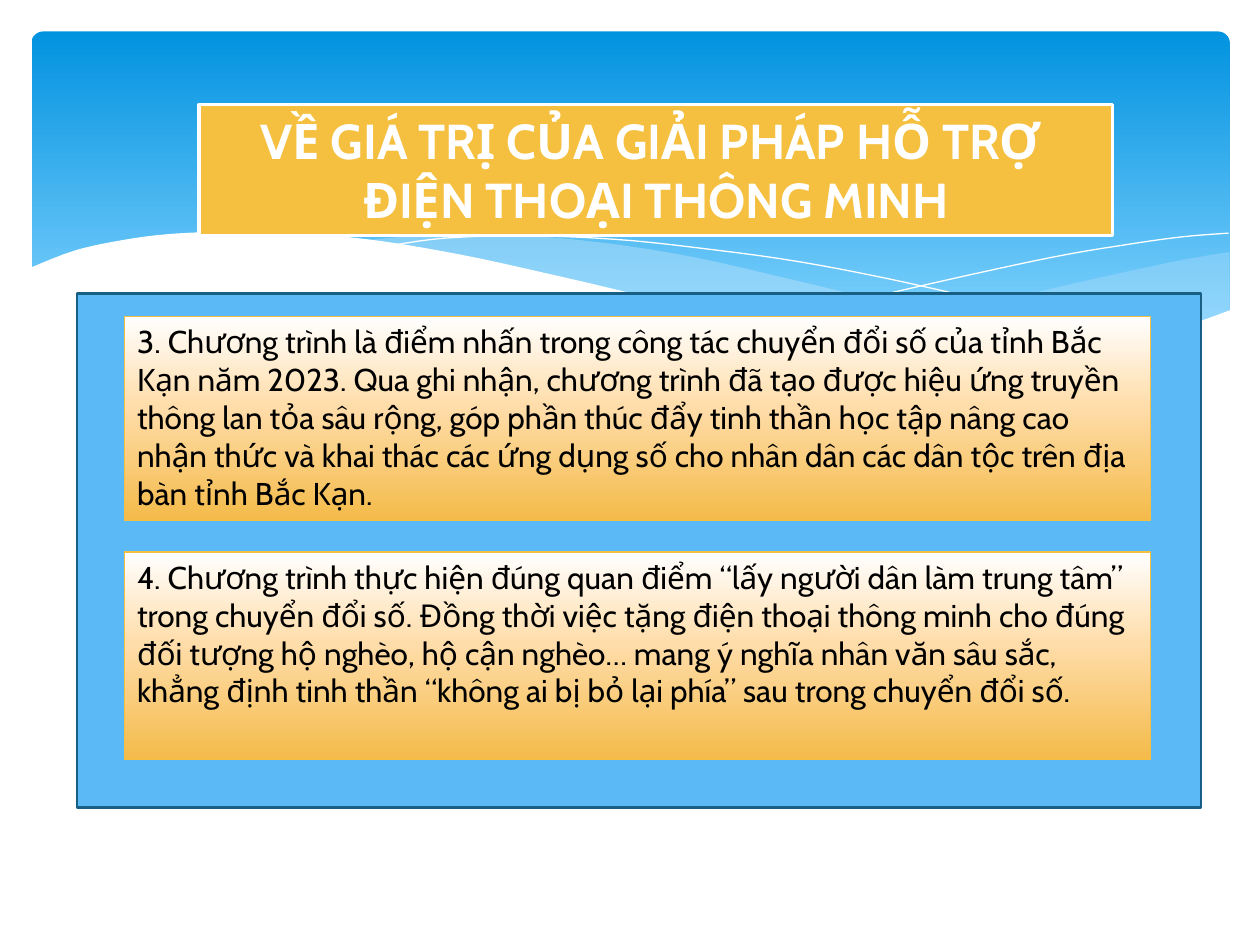
from lxml.etree import SubElement
from pptx import Presentation
from pptx.dml.color import RGBColor
from pptx.enum.shapes import MSO_SHAPE as Preset
from pptx.enum.text import MSO_ANCHOR as Anchor, PP_ALIGN as Align
from pptx.oxml.ns import qn
from pptx.util import Inches, Pt

COLORS = {
    "white": "FFFFFF", "black": "000000", "mist": "C6E7FC",
    "sky_top": "0293E0", "sky_bottom": "83D3FE",
    "panel": "5BBAF6", "panel_edge": "195F84",
    "gold": "F5C040", "gold_mid": "FFDDAA", "gold_deep": "F4BB4A",
}
SKY = [(0, "sky_top"), (90, "sky_bottom")]
GOLD_FADE = [(0, "white"), (44, "gold_mid"), (100, "gold_deep")]

TITLE = ["VỀ GIÁ TRỊ CỦA GIẢI PHÁP HỖ TRỢ ", "ĐIỆN THOẠI THÔNG MINH"]
POINTS = [
    (2.51, 1.62,
     "3. Chương trình là điểm nhấn trong công tác chuyển đổi số của tỉnh Bắc Kạn "
     "năm 2023. Qua ghi nhận, chương trình đã tạo được hiệu ứng truyền thông lan "
     "tỏa sâu rộng, góp phần thúc đẩy tinh thần học tập nâng cao nhận thức và khai "
     "thác các ứng dụng số cho nhân dân các dân tộc trên địa bàn tỉnh Bắc Kạn."),
    (4.38, 1.65,
     "4. Chương trình thực hiện đúng quan điểm “lấy người dân làm trung tâm” trong "
     "chuyển đổi số. Đồng thời việc tặng điện thoại thông minh cho đúng đối tượng "
     "hộ nghèo, hộ cận nghèo… mang ý nghĩa nhân văn sâu sắc, khẳng định tinh thần "
     "“không ai bị bỏ lại phía” sau trong chuyển đổi số."),
]

# Each wave is a list of smooth edges that meet at sharp corners.
RIGHT_WAVE = [
    [(9.76, 2), (9.35, 2.07), (8.61, 2.23), (7.79, 2.42), (7.06, 2.57), (6.61, 2.65)],
    [(6.61, 2.65), (7.19, 2.72), (7.81, 2.77), (8.35, 2.77), (8.81, 2.73),
     (9.28, 2.63), (9.76, 2.47)],
]
MIDDLE_WAVE = [
    [(8.93, 2.73), (8.07, 2.6), (7.06, 2.4), (6.29, 2.22), (5.55, 2.05),
     (4.89, 1.94), (4.2, 1.87), (3.61, 1.85), (2.86, 1.91)],
    [(2.86, 1.91), (3.62, 2.03), (4.49, 2.22), (5.3, 2.4), (6.01, 2.55),
     (6.8, 2.68), (7.48, 2.76), (8.18, 2.78), (8.93, 2.73)],
]
FALLING_LINE = [[(3.09, 1.95), (3.53, 1.89), (4.16, 1.87), (4.89, 1.9), (5.56, 1.97),
                 (6.36, 2.08), (7.27, 2.26), (8.31, 2.51), (9.07, 2.72)]]
RISING_LINE = [[(6.13, 2.57), (6.72, 2.41), (7.48, 2.23), (8.36, 2.04), (8.95, 1.94),
                (9.38, 1.88), (9.75, 1.85)]]
WHITE_WAVE = [
    [(9.77, 2.46), (9.4, 2.59), (8.99, 2.69), (8.5, 2.75), (7.93, 2.76), (7.26, 2.72),
     (6.48, 2.62), (5.55, 2.45), (4.47, 2.2), (3.65, 2.02), (2.92, 1.9), (2.3, 1.85),
     (1.77, 1.84), (1.32, 1.86), (0.95, 1.91), (0.59, 1.99), (0.23, 2.13)],
    [(0.23, 3.29), (9.77, 3.29)],
]


def rgb(name):
    return RGBColor.from_string(COLORS[name])


def smooth(edge, steps=5):
    """Catmull-Rom points along an edge, through all of its knots."""
    if len(edge) < 3:
        return edge
    knots = [edge[0], *edge, edge[-1]]
    curve = [edge[0]]
    for a, b, c, d in zip(knots, knots[1:], knots[2:], knots[3:]):
        for step in range(1, steps + 1):
            t = step / steps
            curve.append(tuple(
                (2 * q + (r - p) * t + (2 * p - 5 * q + 4 * r - s) * t ** 2
                 + (3 * q - p - 3 * r + s) * t ** 3) / 2
                for p, q, r, s in zip(a, b, c, d)))
    return curve


def set_gradient(shape, stops):
    """Fill from top to bottom with (percent, color) stops."""
    shape.fill.gradient()
    shape.fill.gradient_angle = 270
    stop_list = shape._element.spPr.find(".//" + qn("a:gsLst"))
    for old_stop in list(stop_list):
        stop_list.remove(old_stop)
    for percent, color in stops:
        stop = SubElement(stop_list, qn("a:gs"), pos=str(percent * 1000))
        SubElement(stop, qn("a:srgbClr"), val=COLORS[color])


def style(shape, fill=None, line=None, width=0):
    """Fill is a color name, a list of gradient stops, or None."""
    shape.shadow.inherit = False
    if fill is None:
        shape.fill.background()
    elif isinstance(fill, list):
        set_gradient(shape, fill)
    else:
        shape.fill.solid()
        shape.fill.fore_color.rgb = rgb(fill)
    if line is None:
        shape.line.fill.background()
    else:
        shape.line.color.rgb = rgb(line)
        shape.line.width = Pt(width)


def add_box(slide, box, fill, line=None, width=0, preset=Preset.RECTANGLE):
    shape = slide.shapes.add_shape(preset, *map(Inches, box))
    style(shape, fill, line, width)
    return shape


def add_wave(slide, edges, fill=None, line=None, opacity=None):
    points = [(Inches(x), Inches(y)) for edge in edges for x, y in smooth(edge)]
    builder = slide.shapes.build_freeform(*points[0])
    builder.add_line_segments(points[1:], close=fill is not None)
    wave = builder.convert_to_shape()
    style(wave, fill, line)
    if opacity is not None:
        color = wave._element.spPr.find(qn("a:solidFill"))[0]
        SubElement(color, qn("a:alpha"), val=str(opacity * 1000))


def write(shape, lines, size, color, align=Align.LEFT, bold=False):
    frame = shape.text_frame
    frame.word_wrap = True
    frame.vertical_anchor = Anchor.TOP
    for index, line in enumerate(lines):
        paragraph = frame.add_paragraph() if index else frame.paragraphs[0]
        paragraph.alignment = align
        run = paragraph.add_run()
        run.text = line
        run.font.name = "Cabin"
        run.font.size = Pt(size)
        run.font.bold = bold
        run.font.color.rgb = rgb(color)


def add_backdrop(slide):
    sky = add_box(slide, (0.25, 0.25, 9.51, 2.7), SKY, preset=Preset.ROUNDED_RECTANGLE)
    sky.adjustments[0] = 0.034
    add_wave(slide, RIGHT_WAVE, "mist", opacity=29)
    add_wave(slide, MIDDLE_WAVE, "mist", opacity=40)
    add_wave(slide, FALLING_LINE, line="white")
    add_wave(slide, RISING_LINE, line="white")
    add_wave(slide, WHITE_WAVE, "white")


def main():
    prs = Presentation()
    prs.slide_width, prs.slide_height = Inches(10), Inches(7.5)
    slide = prs.slides.add_slide(prs.slide_layouts[6])

    add_backdrop(slide)
    add_box(slide, (0.61, 2.33, 8.92, 4.08), "panel", "panel_edge", 1.25)
    title = add_box(slide, (1.58, 0.83, 7.25, 1.04), "gold", "white", 2)
    write(title, TITLE, 28, "white", Align.CENTER, bold=True)
    for top, height, text in POINTS:
        card = add_box(slide, (0.99, top, 8.14, height), GOLD_FADE, "gold", 0.75)
        write(card, [text], 18, "black")

    prs.save("out.pptx")


if __name__ == "__main__":
    main()
